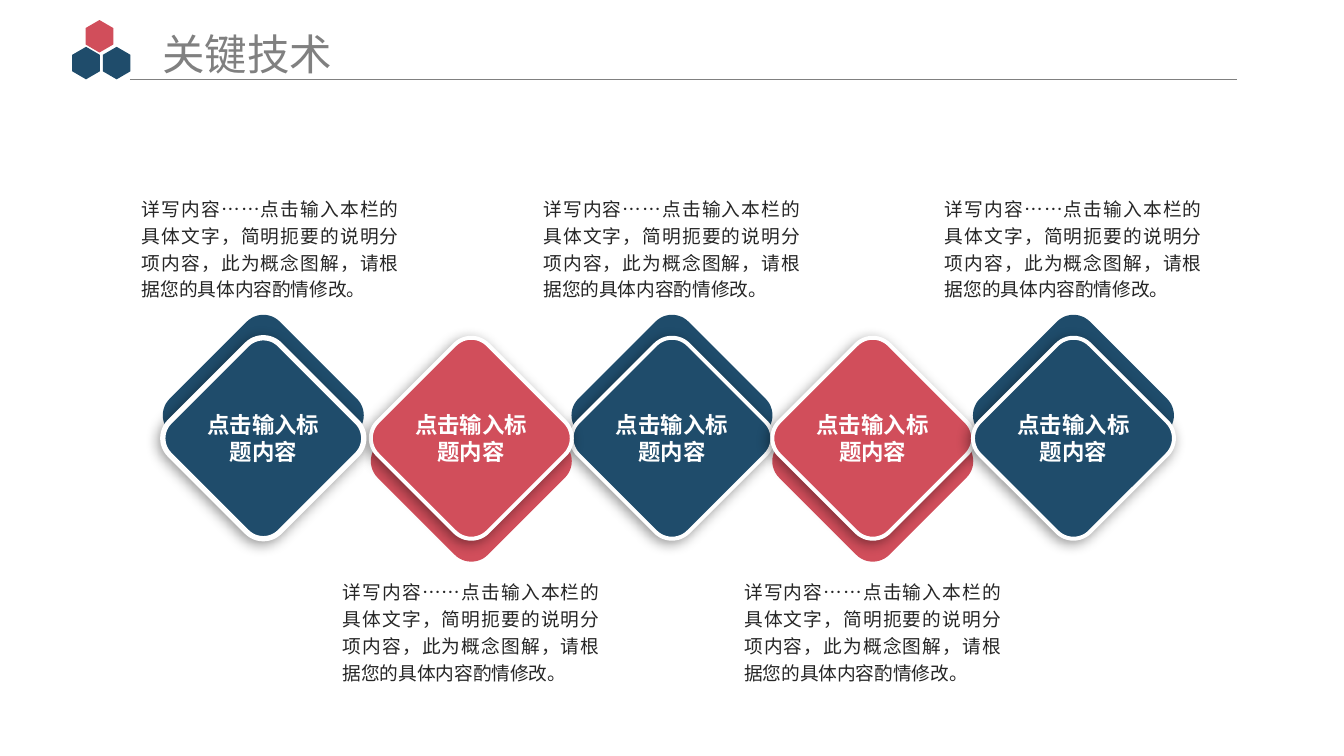
from dataclasses import dataclass

from pptx import Presentation
from pptx.dml.color import RGBColor
from pptx.enum.lang import MSO_LANGUAGE_ID
from pptx.enum.shapes import MSO_CONNECTOR, MSO_SHAPE
from pptx.enum.text import MSO_ANCHOR, MSO_AUTO_SIZE, PP_ALIGN
from pptx.oxml.ns import qn
from pptx.util import Inches, Pt
from lxml import etree

HEX, ROUND = MSO_SHAPE.HEXAGON, MSO_SHAPE.ROUNDED_RECTANGLE
TOP, MIDDLE = MSO_ANCHOR.TOP, MSO_ANCHOR.MIDDLE
LEFT, CENTER, JUSTIFY = PP_ALIGN.LEFT, PP_ALIGN.CENTER, PP_ALIGN.JUSTIFY
GROW, FIXED = MSO_AUTO_SIZE.SHAPE_TO_FIT_TEXT, MSO_AUTO_SIZE.NONE
CHINESE = MSO_LANGUAGE_ID.SIMPLIFIED_CHINESE


@dataclass(frozen=True)
class Theme:
    font: str = "Noto Sans CJK SC"
    blue: str = "1F4C6B"
    red: str = "D14E5B"
    grey: str = "808080"
    ink: str = "262626"
    white: str = "FFFFFF"
    title: float = 32
    label: float = 16.9
    body: float = 14.1


THEME = Theme()

# Content
TITLE = "关键技术"
LABEL = "点击输入标题内容"
BODY = ("详写内容……点击输入本栏的具体文字，简明扼要的说明分项内容，"
        "此为概念图解，请根据您的具体内容酌情修改。")
STEPS = [(LABEL, BODY)] * 5
LOGO = [(0.9, 0.66, THEME.blue), (1.04, 0.38, THEME.red), (1.22, 0.66, THEME.blue)]

# Grid, in inches
WIDE, HIGH = 14.06, 7.91
MID_X, MID_Y, PITCH = WIDE / 2, 4.585, 2.1
FIRST_X = 2.755      # the first diamond stands a little apart
SIDE, SHIFT = 1.63, 0.24
BODY_W, BODY_H, BODY_TOP, BODY_LOW = 2.69, 1.14, 2.02, 6.03


def box(x, y, w, h):
    return [Inches(n) for n in (x, y, w, h)]


def around(x, y, w, h):
    """Box of the given size centred on a point."""
    return box(x - w / 2, y - h / 2, w, h)


def write(shape, text, size, color, bold=False, align=LEFT, anchor=TOP,
          wrap=True, fit=FIXED, inset=None, lines=None):
    frame = shape.text_frame
    frame.auto_size, frame.word_wrap = fit, wrap
    frame.vertical_anchor = anchor
    if inset is not None:
        frame.margin_left = frame.margin_right = Inches(inset)
        frame.margin_top = frame.margin_bottom = Inches(inset)
    para = frame.paragraphs[0]
    para.alignment, para.line_spacing = align, lines
    run = para.add_run()
    run.text = text
    font = run.font
    font.name, font.size, font.bold = THEME.font, Pt(size), bold
    font.color.rgb = RGBColor.from_string(color)
    font.language_id = CHINESE
    east = etree.Element(qn("a:ea"), typeface=THEME.font)
    run._r.get_or_add_rPr().find(qn("a:latin")).addnext(east)


def draw(slide, kind, place, color, turn, bend, edge=0):
    shape = slide.shapes.add_shape(kind, *place)
    shape.rotation, shape.adjustments[0] = turn, bend
    shape.shadow.inherit = False
    shape.fill.solid()
    shape.fill.fore_color.rgb = RGBColor.from_string(color)
    if edge:
        shape.line.color.rgb = RGBColor.from_string(THEME.white)
        shape.line.width = Pt(edge)
    else:
        shape.line.fill.background()
    return shape


def shade(shape):
    """Add a soft shadow that falls to the lower left."""
    effects = shape._element.spPr.find(qn("a:effectLst"))
    outer = etree.SubElement(
        effects, qn("a:outerShdw"), blurRad=str(Pt(10)), dist=str(Pt(3)),
        dir=str(135 * 60000), algn="ctr", rotWithShape="0")
    black = etree.SubElement(outer, qn("a:srgbClr"), val="000000")
    etree.SubElement(black, qn("a:alpha"), val="40000")


def header(slide):
    for x, y, color in LOGO:
        draw(slide, HEX, around(x, y, 0.34, 0.29), color, 90, 0.29)
    rule = slide.shapes.add_connector(
        MSO_CONNECTOR.STRAIGHT, *box(1.36, 0.83, 12.94, 0.83))
    rule.line.color.rgb = RGBColor.from_string(THEME.grey)
    rule.line.width = Pt(0.5)
    etree.SubElement(rule._element.spPr, qn("a:effectLst"))
    title = slide.shapes.title
    title.left, title.top, title.width, title.height = box(1.6, 0.24, 2, 0.64)
    write(title, TITLE, THEME.title, THEME.grey, wrap=False, fit=GROW)


def diamond(slide, x, index):
    low = index % 2
    color, turn, shift = ((THEME.red, 135, SHIFT) if low
                          else (THEME.blue, 315, -SHIFT))
    draw(slide, ROUND, around(x, MID_Y + shift, SIDE, SIDE), color, turn, 0.15)
    edge = 3 if index else 4
    shade(draw(slide, ROUND, around(x, MID_Y, SIDE, SIDE), color, turn, 0.15, edge))


def main():
    deck = Presentation()
    deck.slide_width, deck.slide_height = Inches(WIDE), Inches(HIGH)
    slide = deck.slides.add_slide(deck.slide_layouts[5])
    header(slide)

    half = len(STEPS) // 2
    slots = [MID_X + (i - half) * PITCH for i in range(len(STEPS))]
    spots = [FIRST_X] + slots[1:]
    for i in sorted(range(len(STEPS)), key=lambda i: abs(i - half)):
        diamond(slide, spots[i], i)

    for i, (label, body) in enumerate(STEPS):
        name = slide.shapes.add_textbox(*around(spots[i], MID_Y, 1.4, 0.31))
        write(name, label, THEME.label, THEME.white, bold=True,
              align=CENTER, anchor=MIDDLE)
        top = BODY_LOW if i % 2 else BODY_TOP
        note = slide.shapes.add_textbox(
            *box(slots[i] - BODY_W / 2, top, BODY_W, BODY_H))
        write(note, body, THEME.body, THEME.ink, align=JUSTIFY,
              fit=GROW, inset=0, lines=1.2)
    deck.save("out.pptx")


if __name__ == "__main__":
    main()
